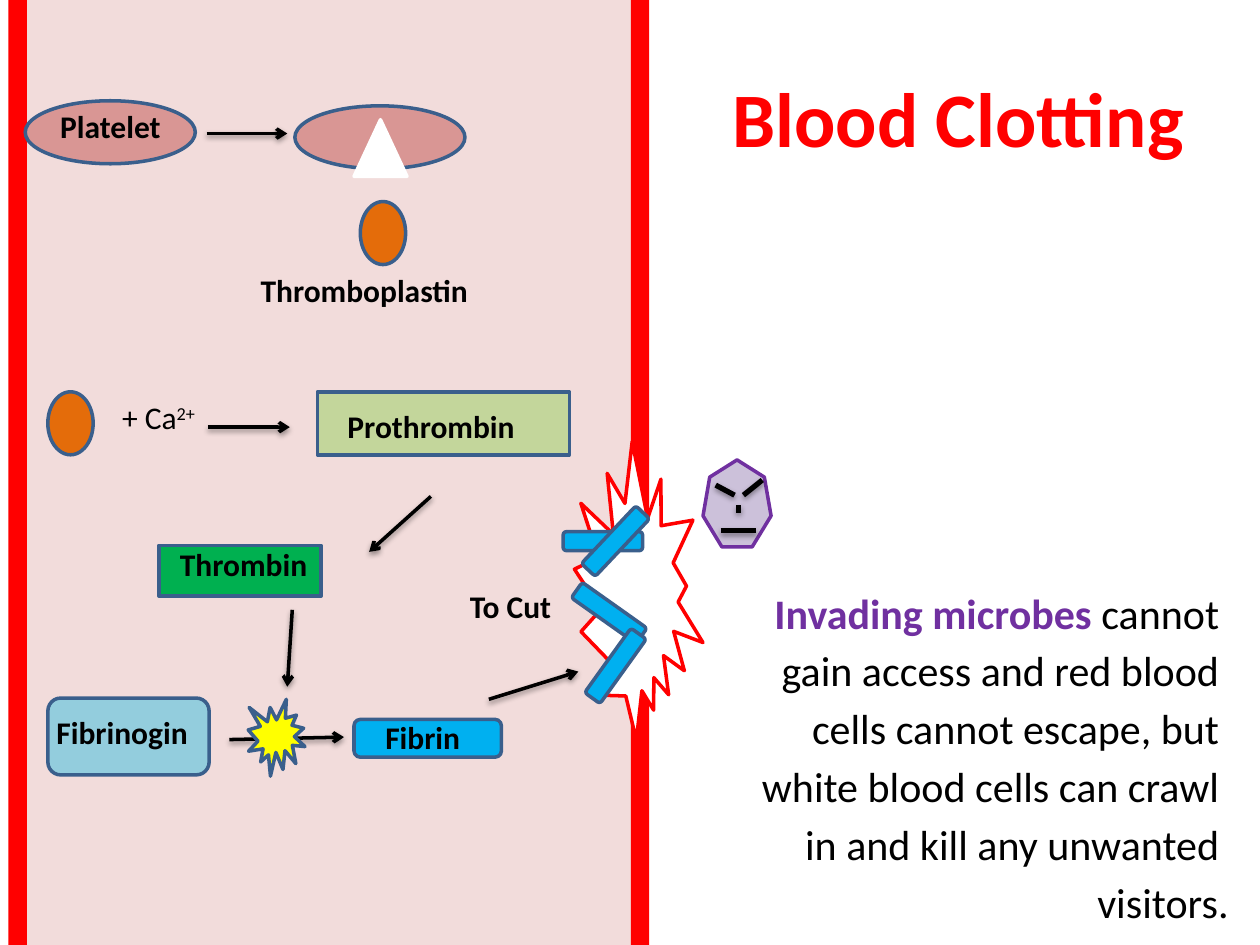
from lxml.etree import SubElement
from pptx import Presentation
from pptx.dml.color import RGBColor
from pptx.enum.shapes import MSO_CONNECTOR, MSO_SHAPE
from pptx.enum.text import MSO_ANCHOR, PP_ALIGN
from pptx.oxml.ns import qn
from pptx.util import Inches, Pt

RED = RGBColor(0xFF, 0x00, 0x00)
BLACK = RGBColor(0x00, 0x00, 0x00)
WHITE = RGBColor(0xFF, 0xFF, 0xFF)
OUTLINE = RGBColor(0x3A, 0x5F, 0x8C)
VESSEL = RGBColor(0xF2, 0xDC, 0xDB)
PLATELET = RGBColor(0xD9, 0x96, 0x94)
THROMBOPLASTIN = RGBColor(0xE4, 0x6C, 0x0A)
PROTHROMBIN = RGBColor(0xC3, 0xD6, 0x9B)
THROMBIN = RGBColor(0x00, 0xB0, 0x50)
FIBRINOGEN = RGBColor(0x93, 0xCD, 0xDD)
FIBRIN = RGBColor(0x00, 0xB0, 0xF0)
REACTION = RGBColor(0xFF, 0xFF, 0x00)
MICROBE = RGBColor(0xCC, 0xC1, 0xDA)
PURPLE = RGBColor(0x70, 0x30, 0xA0)

COLUMNS, ROWS = 100, 75


def add_run(paragraph, text, size=18, color=BLACK, bold=False, superscript=False):
    run = paragraph.add_run()
    run.text = text
    run.font.name = "Calibri"
    run.font.size = Pt(size)
    run.font.bold = bold
    run.font.color.rgb = color
    if superscript:
        run.font._element.set("baseline", "30000")


class ClottingSlide:
    def __init__(self, presentation):
        self.column = presentation.slide_width / COLUMNS
        self.row = presentation.slide_height / ROWS
        self.slide = presentation.slides.add_slide(presentation.slide_layouts[5])
        self.shapes = self.slide.shapes

    def start_group(self):
        self.shapes = self.slide.shapes.add_group_shape().shapes

    def end_group(self):
        self.shapes = self.slide.shapes

    def place(self, x, y):
        return round(x * self.column), round(y * self.row)

    def title(self, text, left, top, width, height):
        title = self.slide.shapes.title
        title.left, title.top = self.place(left, top)
        title.width, title.height = self.place(width, height)
        title.text_frame.vertical_anchor = MSO_ANCHOR.MIDDLE
        paragraph = title.text_frame.paragraphs[0]
        paragraph.alignment = PP_ALIGN.RIGHT
        add_run(paragraph, text, size=44, color=RED, bold=True)

    def shape(self, kind, left, top, width, height, fill, line=OUTLINE, weight=2, rotation=0):
        shape = self.shapes.add_shape(kind, *self.place(left, top), *self.place(width, height))
        shape.shadow.inherit = False
        shape.fill.solid()
        shape.fill.fore_color.rgb = fill
        shape.line.color.rgb = line
        shape.line.width = Pt(weight)
        shape.rotation = rotation

    def text_box(self, left, top, width, height):
        box = self.shapes.add_textbox(*self.place(left, top), *self.place(width, height))
        box.text_frame.word_wrap = True
        return box.text_frame

    def label(self, text, left, top, width=19.3, height=4):
        frame = self.text_box(left, top, width, height)
        add_run(frame.paragraphs[0], text, bold=True)

    def line(self, start, end, weight=3, arrow=False):
        connector = self.shapes.add_connector(
            MSO_CONNECTOR.STRAIGHT, *self.place(*start), *self.place(*end))
        connector.line.color.rgb = BLACK
        connector.line.width = Pt(weight)
        if arrow:
            SubElement(connector.line._get_or_add_ln(), qn("a:tailEnd"), type="arrow")
        effects = SubElement(connector._element.spPr, qn("a:effectLst"))
        shadow = SubElement(effects, qn("a:outerShdw"), blurRad=str(Pt(3.1)),
                            dist=str(Pt(1.6)), dir="5400000", rotWithShape="0")
        color = SubElement(shadow, qn("a:srgbClr"), val=str(BLACK))
        SubElement(color, qn("a:alpha"), val="38000")

    def conclusion(self, lead, lines, left, top, width, height):
        frame = self.text_box(left, top, width, height)
        for index, text in enumerate(lines):
            paragraph = frame.add_paragraph() if index else frame.paragraphs[0]
            paragraph.alignment = PP_ALIGN.RIGHT
            if index:
                paragraph.space_before = Pt(4.3)
            else:
                add_run(paragraph, lead, size=24, color=PURPLE, bold=True)
            add_run(paragraph, text, size=24)


def draw_pathway(slide):
    slide.start_group()
    for left, top in ((2, 8), (23.4, 8.4)):
        slide.shape(MSO_SHAPE.OVAL, left, top, 13.5, 5, PLATELET)
    slide.shape(MSO_SHAPE.ISOSCELES_TRIANGLE, 28.1, 9.5, 4.2, 4.5, WHITE, line=WHITE)
    for left, top in ((28.6, 16), (3.8, 31.1)):
        slide.shape(MSO_SHAPE.OVAL, left, top, 3.6, 5, THROMBOPLASTIN)

    calcium = slide.text_box(8.7, 31.1, 14.5, 5.2).paragraphs[0]
    add_run(calcium, "+ Ca")
    add_run(calcium, "2+", superscript=True)

    slide.shape(MSO_SHAPE.RECTANGLE, 25.2, 31.1, 20, 5, PROTHROMBIN)
    slide.shape(MSO_SHAPE.RECTANGLE, 12.6, 43.3, 12.9, 4, THROMBIN)
    slide.shape(MSO_SHAPE.ROUNDED_RECTANGLE, 3.8, 55.4, 12.8, 6.1, FIBRINOGEN)
    slide.shape(MSO_SHAPE.ROUNDED_RECTANGLE, 28.1, 57.1, 11.7, 3, FIBRIN)

    for start, end in (
        ((16.4, 10.6), (22.8, 10.6)),
        ((16.5, 33.9), (23, 33.9)),
        ((34.2, 39.4), (29.3, 43.8)),
        ((18.2, 58.7), (27.3, 58.5)),
        ((23.2, 48.4), (22.8, 54.5)),
        ((38.8, 55.5), (45.9, 53.3)),
    ):
        slide.line(start, end, weight=2, arrow=True)
    slide.shape(MSO_SHAPE.EXPLOSION1, 19.7, 55.5, 4.5, 6.1, REACTION)

    slide.label("To Cut", 36.3, 46.1, width=14.5, height=4.5)
    slide.label("Platelet", 3.8, 8, width=11.7)
    for text, left, top in (
        ("Thromboplastin", 19.7, 21),
        ("Prothrombin", 26.6, 31.8),
        ("Thrombin", 13.3, 42.8),
        ("Fibrin", 29.6, 56.5),
        ("Fibrinogin", 3.5, 56.1),
    ):
        slide.label(text, left, top)
    slide.end_group()


def draw_wound(slide):
    slide.shape(MSO_SHAPE.EXPLOSION2, 45.5, 35.2, 10.6, 23.2, WHITE, line=RED, rotation=347.4)
    for left, top, rotation in (
        (45.2, 47.9, 35.3), (44.7, 42.2, 0), (45.7, 52.1, 305.7), (45.7, 42.2, 133.3),
    ):
        slide.shape(MSO_SHAPE.ROUNDED_RECTANGLE, left, top, 6.3, 1.5, FIBRIN, rotation=rotation)


def draw_microbe(slide):
    slide.start_group()
    slide.shape(MSO_SHAPE.HEPTAGON, 55.8, 36.5, 5.4, 6.9, MICROBE, line=PURPLE)
    for start, end in (
        ((56.8, 38.5), (58.3, 39.3)),
        ((59, 39.3), (60.5, 38.1)),
        ((57.2, 42.1), (60, 42.1)),
        ((58.6, 40.7), (58.6, 40.1)),
    ):
        slide.line(start, end)
    slide.end_group()


def main():
    presentation = Presentation()
    presentation.slide_width, presentation.slide_height = Inches(10), Inches(7.5)
    slide = ClottingSlide(presentation)
    slide.shape(MSO_SHAPE.ROUNDED_RECTANGLE, 1.4, -9.7, 49.4, 95.8, VESSEL, line=RED, weight=10.5)
    slide.title("Blood Clotting", 5, 3, 90, 12.5)
    slide.conclusion("Invading microbes ", (
        "cannot ",
        "gain access and red blood ",
        "cells cannot escape, but ",
        "white blood cells can crawl ",
        "in and kill any unwanted ",
        "visitors.",
    ), 55, 46.1, 43.5, 28.4)
    draw_pathway(slide)
    draw_wound(slide)
    draw_microbe(slide)
    presentation.save("out.pptx")


if __name__ == "__main__":
    main()
